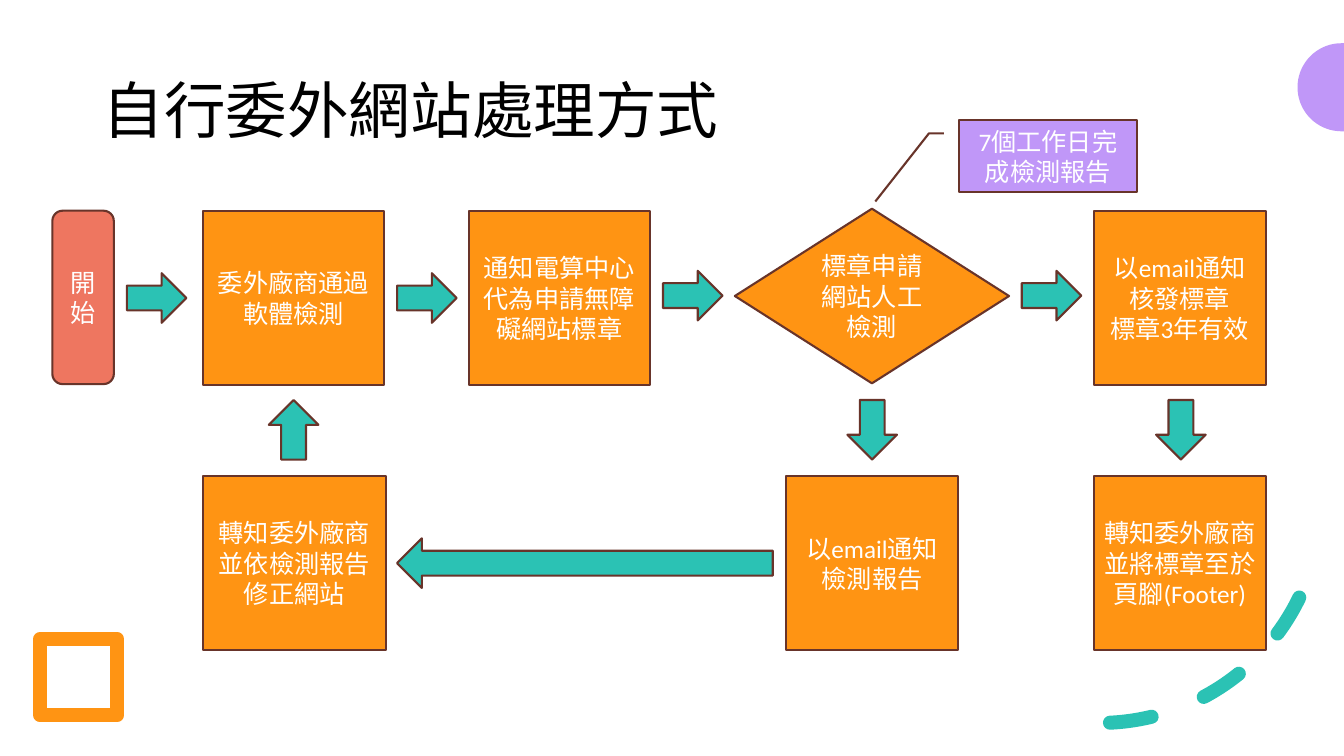
import math

import pptx
import pptx.dml.color
import pptx.enum.dml
import pptx.enum.shapes
import pptx.enum.text
import pptx.oxml.ns
import pptx.util
from lxml import etree

Cm = pptx.util.Cm
Pt = pptx.util.Pt
RGBColor = pptx.dml.color.RGBColor
SHAPE = pptx.enum.shapes.MSO_SHAPE
ALIGN = pptx.enum.text.PP_ALIGN
ANCHOR = pptx.enum.text.MSO_ANCHOR
qn = pptx.oxml.ns.qn

ORANGE = RGBColor(0xFF, 0x94, 0x13)
TEAL = RGBColor(0x2B, 0xC2, 0xB4)
PURPLE = RGBColor(0xC0, 0x97, 0xF8)
CORAL = RGBColor(0xEE, 0x76, 0x60)
BROWN = RGBColor(0x68, 0x34, 0x2A)
WHITE = RGBColor(0xFF, 0xFF, 0xFF)
BLACK = RGBColor(0x00, 0x00, 0x00)

FONT = "Calibri"
TOP_ROW = 5.31
BOTTOM_ROW = 11.99
STEP_HEIGHT = 4.4
ARROW_LENGTH = 1.5
ARROW_HEIGHT = 1.25


def add_text(paragraph, text, size, color):
    run = paragraph.add_run()
    run.text = text
    run.font.name = FONT
    run.font.size = Pt(size)
    run.font.color.rgb = color


def add_outlined(slide, kind, left, top, width, height, fill):
    shape = slide.shapes.add_shape(kind, Cm(left), Cm(top), Cm(width), Cm(height))
    shape.shadow.inherit = False
    shape.fill.solid()
    shape.fill.fore_color.rgb = fill
    shape.line.color.rgb = BROWN
    shape.line.width = Pt(1.5)
    return shape


def add_step(slide, kind, left, top, width, height, fill, lines):
    step = add_outlined(slide, kind, left, top, width, height, fill)
    frame = step.text_frame
    frame.word_wrap = True
    frame.vertical_anchor = ANCHOR.MIDDLE
    for index, line in enumerate(lines):
        paragraph = frame.add_paragraph() if index else frame.paragraphs[0]
        paragraph.alignment = ALIGN.CENTER
        add_text(paragraph, line, 18, WHITE)


def add_arrow(slide, center_x, center_y, rotation=0, length=ARROW_LENGTH):
    arrow = add_outlined(slide, SHAPE.RIGHT_ARROW, center_x - length / 2,
                         center_y - ARROW_HEIGHT / 2, length, ARROW_HEIGHT, TEAL)
    arrow.rotation = rotation


def add_thick_outline(slide, kind, left, top, size, color):
    outline = slide.shapes.add_shape(kind, Cm(left), Cm(top), Cm(size), Cm(size))
    outline.shadow.inherit = False
    outline.fill.background()
    outline.line.color.rgb = color
    outline.line.width = Pt(10)
    return outline


def round_line(shape):
    line = shape.line._get_or_add_ln()
    line.set("cap", "rnd")
    etree.SubElement(line, qn("a:round"))


def add_decorations(slide):
    square = add_thick_outline(slide, SHAPE.RECTANGLE, 1.02, 16.1, 1.93, ORANGE)
    round_line(square)

    arc = add_thick_outline(slide, SHAPE.ARC, 22.12, 7.04, 11.18, TEAL)
    arc.adjustments[0] = 162
    arc.adjustments[1] = 200.93
    arc.rotation = 357.3
    arc._element.spPr.find(qn("a:xfrm")).set("flipV", "1")
    arc.line.dash_style = pptx.enum.dml.MSO_LINE.DASH
    round_line(arc)

    center_x, center_y, radius, edge = 33.81, 2.2, 1.11, 33.87
    rim = [(center_x + radius * math.cos(math.radians(angle)),
            center_y + radius * math.sin(math.radians(angle)))
           for angle in range(90, 271, 5)]
    corners = rim + [(edge, center_y - radius), (edge, center_y + radius)]
    points = [(Cm(x), Cm(y)) for x, y in corners]
    builder = slide.shapes.build_freeform(*points[0])
    builder.add_line_segments(points[1:], close=True)
    half_circle = builder.convert_to_shape()
    half_circle.shadow.inherit = False
    half_circle.fill.solid()
    half_circle.fill.fore_color.rgb = PURPLE
    half_circle.line.fill.background()


def add_title(slide, text):
    title = slide.shapes.title
    title.left, title.top = Cm(2.33), Cm(1.01)
    title.width, title.height = Cm(29.21), Cm(3.68)
    frame = title.text_frame
    frame.word_wrap = True
    frame.auto_size = pptx.enum.text.MSO_AUTO_SIZE.NONE
    frame.vertical_anchor = ANCHOR.MIDDLE
    paragraph = frame.paragraphs[0]
    paragraph.alignment = ALIGN.LEFT
    paragraph.line_spacing = 0.9
    add_text(paragraph, text, 44, BLACK)


def main():
    presentation = pptx.Presentation()
    presentation.slide_width = Cm(33.87)
    presentation.slide_height = Cm(19.05)
    slide = presentation.slides.add_slide(presentation.slide_layouts[5])

    add_decorations(slide)
    add_title(slide, "自行委外網站處理方式")

    boxes = [
        (5.11, TOP_ROW, 4.57, ["委外廠商通過軟體檢測"]),
        (11.81, TOP_ROW, 4.57, ["通知電算中心代為申請無障礙網站標章"]),
        (27.56, TOP_ROW, 4.34, ["以email通知核發標章", "標章3年有效"]),
        (5.11, BOTTOM_ROW, 4.62, ["轉知委外廠商並依檢測報告修正網站"]),
        (19.81, BOTTOM_ROW, 4.34, ["以email通知檢測報告"]),
        (27.56, BOTTOM_ROW, 4.34, ["轉知委外廠商並將標章至於頁腳(Footer)"]),
    ]
    for left, top, width, lines in boxes:
        add_step(slide, SHAPE.RECTANGLE, left, top, width, STEP_HEIGHT, ORANGE, lines)
    add_step(slide, SHAPE.DIAMOND, 18.52, 5.26, 6.91, STEP_HEIGHT, ORANGE,
             ["標章申請網站人工檢測"])
    add_step(slide, SHAPE.LINE_CALLOUT_2, 24.16, 3.02, 4.5, 1.83, PURPLE,
             ["7個工作日完成檢測報告"])
    add_step(slide, SHAPE.ROUNDED_RECTANGLE, 1.32, TOP_ROW, 1.55, 4.37, CORAL, ["開始"])

    for center_x, center_y in [(3.95, 7.51), (10.76, 7.51), (17.46, 7.45), (26.5, 7.45)]:
        add_arrow(slide, center_x, center_y)
    for center_x, rotation in [(7.4, 270), (21.98, 90), (29.76, 90)]:
        add_arrow(slide, center_x, 10.83, rotation)
    add_arrow(slide, 14.74, 14.19, 180, 9.47)

    presentation.save("out.pptx")


if __name__ == "__main__":
    main()
